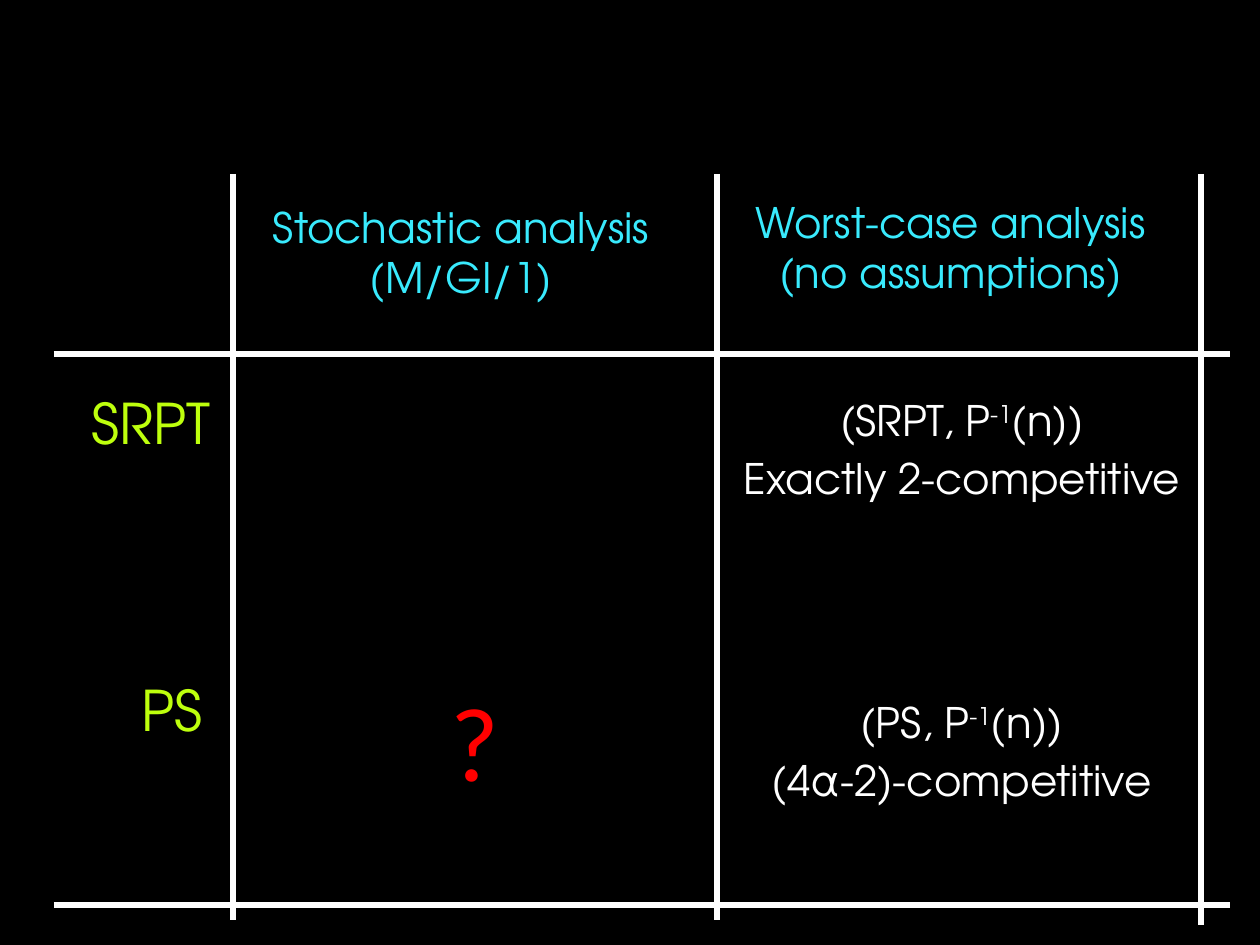
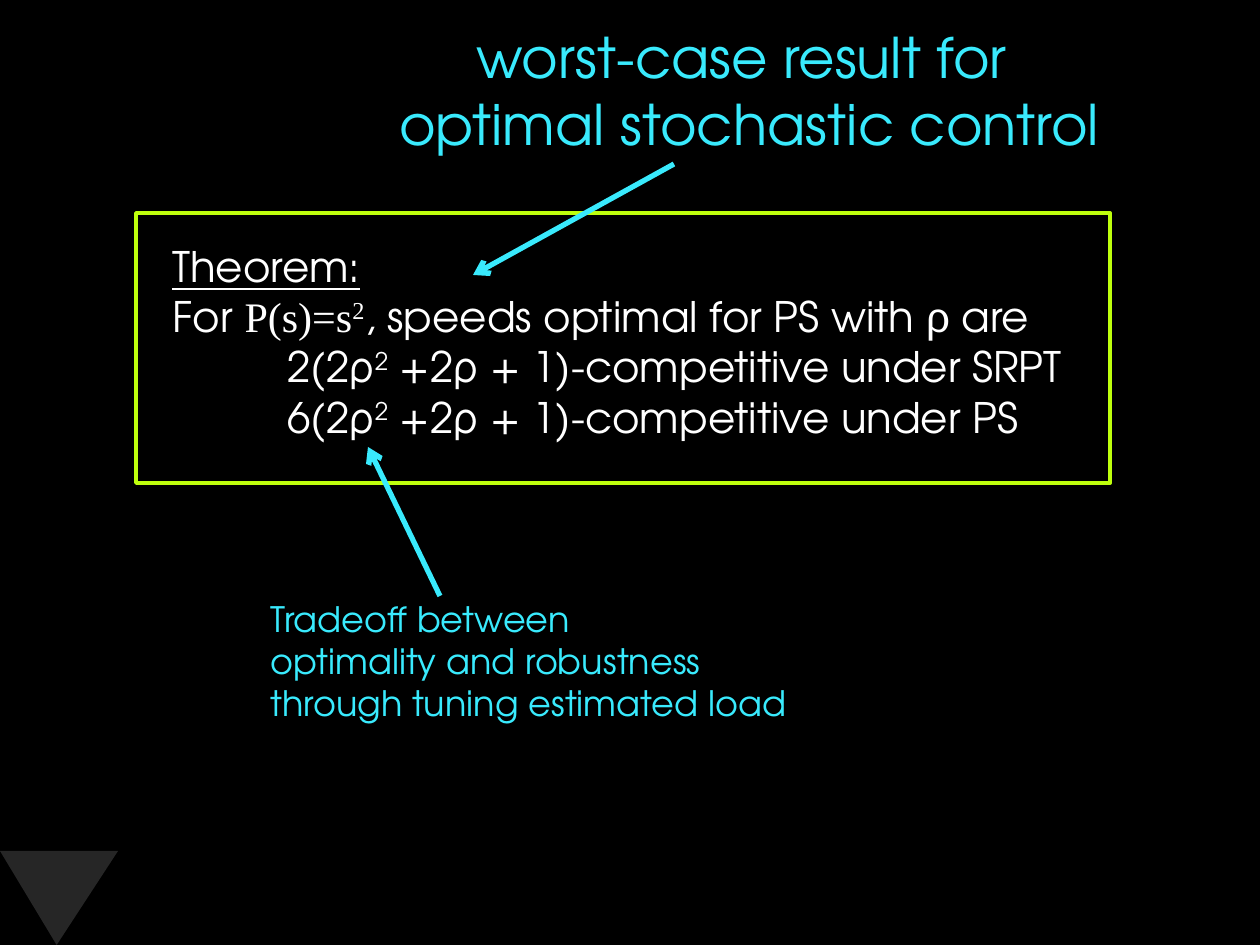
"""Build two slides comparing stochastic and worst-case speed scaling results."""
from lxml.etree import SubElement
from pptx import Presentation
from pptx.dml.color import RGBColor
from pptx.enum.shapes import MSO_CONNECTOR, MSO_SHAPE
from pptx.enum.text import MSO_AUTO_SIZE, PP_ALIGN
from pptx.oxml.ns import qn
from pptx.util import Pt

PIXEL = 914400 / 126
SLIDE_SIZE = (1260, 945)

BLACK = RGBColor(0x00, 0x00, 0x00)
WHITE = RGBColor(0xFF, 0xFF, 0xFF)
LIME = RGBColor(0xBE, 0xFF, 0x0D)
CYAN = RGBColor(0x39, 0xEA, 0xFD)
RED = RGBColor(0xFF, 0x00, 0x00)
CHARCOAL = RGBColor(0x26, 0x26, 0x26)

MAIN_FONT = "TeX Gyre Adventor"
LEFT, CENTER = PP_ALIGN.LEFT, PP_ALIGN.CENTER

RAISED = {"superscript": True}
UNDERLINED = {"underline": True}
SERIF = {"name": "Times New Roman"}
SANS = {"name": "Arial"}

ROW_LABEL = {"size": 32, "color": LIME}
COLUMN_LABEL = {"size": 24, "color": CYAN, "align": CENTER}
RESULT = {"size": 24, "color": WHITE, "align": CENTER, "gap": 4.8}
UNKNOWN = {"size": 60, "color": RED, "align": CENTER, "font": "Calibri"}
THEOREM = {"size": 24, "color": WHITE, "wrap": True}
HEADLINE = {"size": 32, "color": CYAN, "align": CENTER, "wrap": True}
REMARK = {"size": 20, "color": CYAN}

INVERSE_POWER = [("-1", RAISED), "(n))"]
COMPARISON_TEXTS = [
    ((79, 382, 146, 81), ROW_LABEL, [["SRPT"]]),
    ((129, 669, 87, 81), ROW_LABEL, [["PS"]]),
    ((258, 195, 406, 115), COLUMN_LABEL, [["Stochastic analysis"], ["(M/GI/1)"]]),
    ((740, 190, 421, 115), COLUMN_LABEL, [["Worst-case analysis"], ["(no assumptions)"]]),
    ((726, 388, 472, 125), RESULT,
     [["(SRPT, P", *INVERSE_POWER], ["Exactly 2-competitive"]]),
    ((758, 690, 407, 125), RESULT,
     [["(PS, P", *INVERSE_POWER], ["(4α-2)-competitive"]]),
    ((438, 670, 74, 140), UNKNOWN, [["?"]]),
]
COLUMN_START, COLUMN_STEP = 233, 484
COLUMN_TOP, COLUMN_BOTTOMS = 174, (920, 920, 925)
ROW_LEFT, ROW_RIGHT, ROW_LINES = 54, 1230, (354, 905)

INDENT = 115
BOUNDS = [(2, "SRPT"), (6, "PS")]
THEOREM_LINES = [
    [("Theorem:", UNDERLINED)],
    ["For ", ("P(s)=s", SERIF), ("2", SERIF | RAISED),
     ", speeds optimal for PS with ", ("ρ", SANS), " are"],
]
BOUND_LINES = [
    [f"{factor}(2ρ", ("2", RAISED), f" +2ρ + 1)-competitive under {policy}"]
    for factor, policy in BOUNDS
]
THEOREM_FRAME = (136, 213, 974, 270)
THEOREM_TEXTS = [
    ((160, 234, 937, 217), THEOREM | {"indents": (0, 0, INDENT, INDENT)},
     THEOREM_LINES + BOUND_LINES),
    ((258, 591, 547, 140), REMARK,
     [["Tradeoff between"], ["optimality and robustness"],
      ["through tuning estimated load"]]),
    ((323, 16, 853, 149), HEADLINE,
     [["worst-case result for "], ["optimal stochastic control"]]),
]
ARROWS = [((440, 596), (368, 447)), ((674, 164), (473, 275))]
CORNER_MARK = (0, 851, 118, 94)


def scaled(lengths):
    return [round(length * PIXEL) for length in lengths]


def add_run(paragraph, piece, style):
    text, changes = (piece, {}) if isinstance(piece, str) else piece
    run = paragraph.add_run()
    run.text = text
    values = {"name": style.get("font", MAIN_FONT), "size": Pt(style["size"])} | changes
    if values.pop("superscript", False):
        run._r.get_or_add_rPr().set("baseline", "30000")
    for name, value in values.items():
        setattr(run.font, name, value)
    run.font.color.rgb = style["color"]


def add_text(slide, box, style, lines):
    frame = slide.shapes.add_textbox(*scaled(box)).text_frame
    frame.word_wrap = style.get("wrap", False)
    frame.auto_size = MSO_AUTO_SIZE.SHAPE_TO_FIT_TEXT
    indents = style.get("indents", [0] * len(lines))
    for index, (pieces, indent) in enumerate(zip(lines, indents)):
        paragraph = frame.add_paragraph() if index else frame.paragraphs[0]
        paragraph.alignment = style.get("align", LEFT)
        paragraph.space_before = Pt(style.get("gap", 0) if index else 0)
        if indent:
            paragraph._p.get_or_add_pPr().set("marL", str(round(indent * PIXEL)))
        for piece in pieces:
            add_run(paragraph, piece, style)


def add_line(slide, start, end, color, arrow=False):
    connector = slide.shapes.add_connector(
        MSO_CONNECTOR.STRAIGHT, *scaled(start + end))
    connector.line.color.rgb = color
    connector.line.width = Pt(3)
    if arrow:
        outline = connector.line._get_or_add_ln()
        SubElement(outline, qn("a:tailEnd"), type="arrow")
    SubElement(connector._element.spPr, qn("a:effectLst"))


def add_shape(slide, kind, box):
    shape = slide.shapes.add_shape(kind, *scaled(box))
    shape.shadow.inherit = False
    return shape


def add_slide(presentation):
    slide = presentation.slides.add_slide(presentation.slide_layouts[6])
    slide.background.fill.solid()
    slide.background.fill.fore_color.rgb = BLACK
    return slide


def build_comparison(presentation):
    slide = add_slide(presentation)
    for index, bottom in enumerate(COLUMN_BOTTOMS):
        x = COLUMN_START + index * COLUMN_STEP
        add_line(slide, (x, COLUMN_TOP), (x, bottom), WHITE)
    for y in ROW_LINES:
        add_line(slide, (ROW_LEFT, y), (ROW_RIGHT, y), WHITE)
    for box, style, lines in COMPARISON_TEXTS:
        add_text(slide, box, style, lines)


def build_theorem(presentation):
    slide = add_slide(presentation)
    theorem_frame = add_shape(slide, MSO_SHAPE.RECTANGLE, THEOREM_FRAME)
    theorem_frame.fill.background()
    theorem_frame.line.color.rgb = LIME
    theorem_frame.line.width = Pt(2.25)
    for box, style, lines in THEOREM_TEXTS:
        add_text(slide, box, style, lines)
    for start, end in ARROWS:
        add_line(slide, start, end, CYAN, arrow=True)
    corner_mark = add_shape(slide, MSO_SHAPE.ISOSCELES_TRIANGLE, CORNER_MARK)
    corner_mark.adjustments[0] = 0.52
    corner_mark.rotation = 180
    corner_mark.fill.solid()
    corner_mark.fill.fore_color.rgb = CHARCOAL
    corner_mark.line.fill.background()


def main():
    presentation = Presentation()
    presentation.slide_width, presentation.slide_height = scaled(SLIDE_SIZE)
    build_comparison(presentation)
    build_theorem(presentation)
    presentation.save("out.pptx")


if __name__ == "__main__":
    main()
